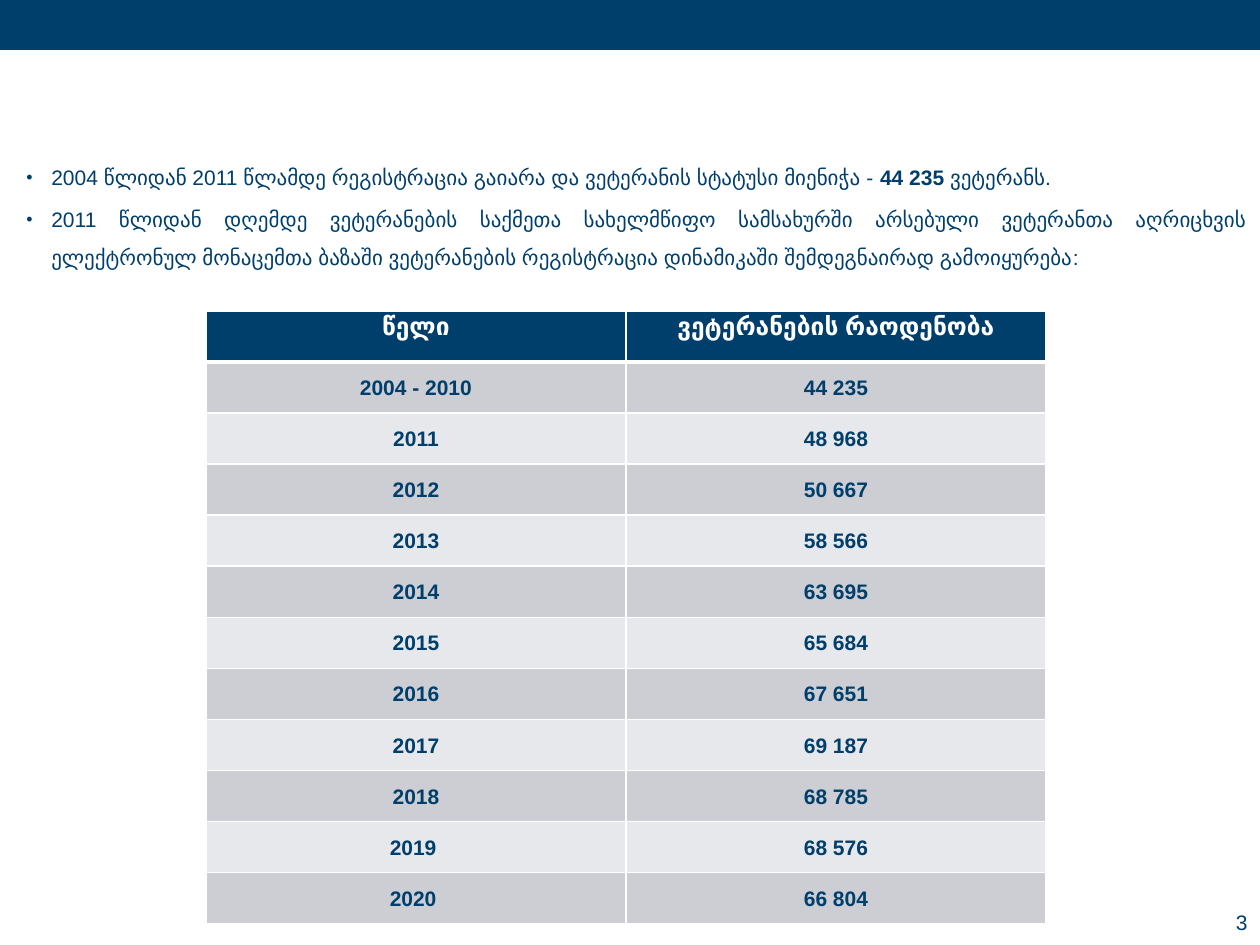
import dataclasses
import typing

import pptx
import pptx.dml.color
import pptx.enum.shapes
import pptx.enum.text
import pptx.oxml
import pptx.oxml.ns
import pptx.util

EMU_PER_PX = 914400 / 126
ALIGN = pptx.enum.text.PP_ALIGN
ANCHOR = pptx.enum.text.MSO_ANCHOR


@dataclasses.dataclass(frozen=True)
class Theme:
    navy: str = "003E6C"
    white: str = "FFFFFF"
    bands: tuple[str, str] = ("CCCED4", "E7E8EB")
    font: str = "Arial"
    body_size: int = 12
    header_size: int = 14
    thin_border: int = 1
    thick_border: int = 3


@dataclasses.dataclass(frozen=True)
class Area:
    left: int
    top: int
    width: int
    height: int

    def emu(self) -> list[int]:
        return [px(length) for length in dataclasses.astuple(self)]


@dataclasses.dataclass(frozen=True)
class Span:
    text: str
    bold: bool = False


@dataclasses.dataclass(frozen=True)
class YearCount:
    year: str
    veterans: str


THEME = Theme()
BANNER = Area(0, 0, 1260, 50)
SUMMARY = Area(14, 146, 1246, 140)
PAGE_NUMBER = Area(1113, 900, 147, 45)
REGISTER = Area(206, 311, 840, 613)

BULLETS = [
    [
        Span("2004 წლიდან 2011 წლამდე რეგისტრაცია გაიარა და ვეტერანის სტატუსი მიენიჭა - "),
        Span("44 235", True),
        Span(" ვეტერანს."),
    ],
    [
        Span(
            "2011 წლიდან დღემდე ვეტერანების საქმეთა სახელმწიფო სამსახურში არსებული "
            "ვეტერანთა აღრიცხვის ელექტრონულ მონაცემთა ბაზაში ვეტერანების რეგისტრაცია "
            "დინამიკაში შემდეგნაირად გამოიყურება:"
        )
    ],
]
ROWS = [
    YearCount("წელი", "ვეტერანების რაოდენობა"),
    YearCount("2004 - 2010", "44 235"),
    YearCount("2011", "48 968"),
    YearCount("2012", "50 667"),
    YearCount("2013", "58 566"),
    YearCount("2014", "63 695"),
    YearCount("2015", "65 684"),
    YearCount("2016", "67 651"),
    YearCount("2017", "69 187"),
    YearCount("2018", "68 785"),
    YearCount("2019 ", "68 576"),
    YearCount("2020 ", "66 804"),
]


def px(length: int) -> int:
    return round(length * EMU_PER_PX)


def rgb(color: str) -> pptx.dml.color.RGBColor:
    return pptx.dml.color.RGBColor.from_string(color)


def apply_format(target: typing.Any, values: dict[str, typing.Any]) -> None:
    for name, value in values.items():
        setattr(target, name, value)


def add_span(para: typing.Any, span: Span, size: int, color: str) -> None:
    run = para.add_run()
    run.text = span.text
    apply_format(
        run.font,
        {"name": THEME.font, "size": pptx.util.Pt(size), "bold": span.bold},
    )
    run.font.color.rgb = rgb(color)


def add_bullet(para: typing.Any) -> None:
    properties = para._p.get_or_add_pPr()
    apply_indent = {"marL": px(25), "indent": -px(25)}
    for name, value in apply_indent.items():
        properties.set(name, str(value))
    namespace = pptx.oxml.ns.nsdecls("a")
    for markup in (
        f'<a:buClr {namespace}><a:srgbClr val="{THEME.navy}"/></a:buClr>',
        f'<a:buSzPct {namespace} val="85000"/>',
        f'<a:buFont {namespace} typeface="{THEME.font}"/>',
        f'<a:buChar {namespace} char="•"/>',
    ):
        properties.append(pptx.oxml.parse_xml(markup))


def add_text_box(page: typing.Any, area: Area, anchor: typing.Any) -> typing.Any:
    frame = page.shapes.add_textbox(*area.emu()).text_frame
    apply_format(frame, {"word_wrap": True, "vertical_anchor": anchor})
    return frame


def add_banner(page: typing.Any) -> None:
    banner = page.shapes.add_shape(
        pptx.enum.shapes.MSO_SHAPE.RECTANGLE, *BANNER.emu()
    )
    banner.shadow.inherit = False
    banner.fill.solid()
    banner.fill.fore_color.rgb = rgb(THEME.navy)
    banner.line.fill.background()


def add_summary(page: typing.Any) -> None:
    frame = add_text_box(page, SUMMARY, ANCHOR.TOP)
    for index, spans in enumerate(BULLETS):
        para = frame.add_paragraph() if index else frame.paragraphs[0]
        add_bullet(para)
        space = pptx.util.Pt(2.4 if index else 0)
        apply_format(
            para,
            {"alignment": ALIGN.JUSTIFY, "line_spacing": 1.5, "space_before": space},
        )
        for span in spans:
            add_span(para, span, THEME.body_size, THEME.navy)


def add_page_number(page: typing.Any) -> None:
    para = add_text_box(page, PAGE_NUMBER, ANCHOR.MIDDLE).paragraphs[0]
    para.alignment = ALIGN.RIGHT
    add_span(para, Span("3"), THEME.body_size, THEME.navy)


def add_borders(cell: typing.Any, widths: dict[str, int]) -> None:
    properties = cell._tc.get_or_add_tcPr()
    for side, width in widths.items():
        properties.append(pptx.oxml.parse_xml(
            f'<a:ln{side} {pptx.oxml.ns.nsdecls("a")} w="{pptx.util.Pt(width)}">'
            f'<a:solidFill><a:srgbClr val="{THEME.white}"/></a:solidFill></a:ln{side}>'
        ))


def fill_cell(cell: typing.Any, text: str, row: int) -> None:
    header = row == 0
    thin, thick = THEME.thin_border, THEME.thick_border
    add_borders(cell, {
        "L": thin,
        "R": thin,
        "T": thick if row == 1 else thin,
        "B": thick if header else thin,
    })
    cell.fill.solid()
    cell.fill.fore_color.rgb = rgb(THEME.navy if header else THEME.bands[(row - 1) % 2])
    apply_format(cell, {
        "margin_left": px(9),
        "margin_right": px(9),
        "margin_top": 0,
        "margin_bottom": 0,
        "vertical_anchor": ANCHOR.TOP if header else ANCHOR.MIDDLE,
    })
    para = cell.text_frame.paragraphs[0]
    apply_format(para, {"alignment": ALIGN.CENTER, "line_spacing": 1.07})
    size = THEME.header_size if header else THEME.body_size
    add_span(para, Span(text, True), size, THEME.white if header else THEME.navy)


def add_register(page: typing.Any) -> None:
    table = page.shapes.add_table(len(ROWS), 2, *REGISTER.emu()).table
    for row, entry in enumerate(ROWS):
        for column, text in enumerate(dataclasses.astuple(entry)):
            fill_cell(table.cell(row, column), text, row)


def main() -> None:
    deck = pptx.Presentation()
    apply_format(deck, {"slide_width": px(1260), "slide_height": px(945)})
    page = deck.slides.add_slide(deck.slide_layouts[6])
    add_banner(page)
    add_summary(page)
    add_page_number(page)
    add_register(page)
    deck.save("out.pptx")


if __name__ == "__main__":
    main()
